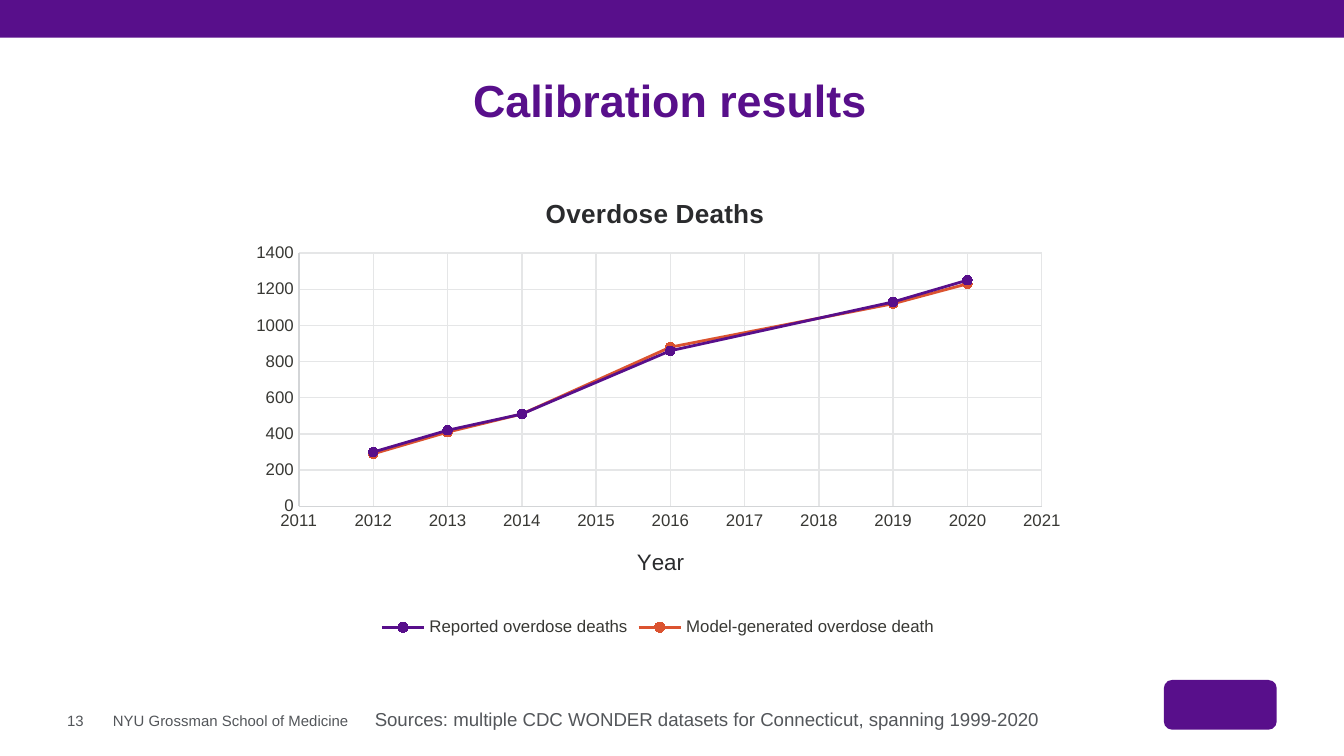
from lxml.etree import SubElement
from pptx import Presentation
from pptx.chart.data import XyChartData
from pptx.dml.color import RGBColor
from pptx.enum.chart import XL_CHART_TYPE, XL_LEGEND_POSITION, XL_MARKER_STYLE, XL_TICK_MARK
from pptx.enum.shapes import MSO_SHAPE
from pptx.enum.text import MSO_ANCHOR
from pptx.oxml.ns import qn
from pptx.util import Inches, Pt

COLORS = {
    "purple": "580F8B", "orange": "DB5330", "gray": "53565A", "dark": "2A2B2D",
    "label": "383834", "axis": "D3D5D7", "grid": "E5E6E7",
}
FONT = "Arial"
WIDTH = 10
HEIGHT = WIDTH * 9 / 16
YEARS = [2012, 2013, 2014, 2016, 2019, 2020]
SERIES = [
    ("Reported overdose deaths", "purple", [300, 420, 510, 860, 1130, 1250]),
    ("Model-generated overdose death", "orange", [290, 410, 510, 880, 1120, 1230]),
]
BLOCKS = [
    (0, 0, WIDTH, 0.28, MSO_SHAPE.RECTANGLE),
    (8.66, 5.06, 0.84, 0.37, MSO_SHAPE.ROUNDED_RECTANGLE),
]
TEXTS = [
    ("Calibration results", dict(box=(3.52, 0.6, 2.96, 0.34), size=24, color="purple",
                                 bold=True, anchor=MSO_ANCHOR.BOTTOM, spacing=0.85)),
    ("NYU Grossman School of Medicine", dict(box=(0.84, 5.3, 3.7, 0.13), size=8)),
    ("13", dict(box=(0.5, 5.3, 0.28, 0.13), size=8)),
    ("Sources: multiple CDC WONDER datasets for Connecticut, spanning 1999-2020",
     dict(box=(2.69, 5.22, 5.18, 0.27), size=10, anchor=MSO_ANCHOR.TOP,
          inset=(0.1, 0.05), wrap=False)),
]


def rgb(name):
    return RGBColor.from_string(COLORS[name])


def style(font, size, color, bold=False):
    font.name, font.size, font.bold = FONT, Pt(size), bold
    font.color.rgb = rgb(color)


def add_text(slide, text, box, size, color="gray", bold=False,
             anchor=MSO_ANCHOR.MIDDLE, inset=(0, 0), wrap=True, spacing=None):
    frame = slide.shapes.add_textbox(*map(Inches, box)).text_frame
    frame.word_wrap, frame.vertical_anchor = wrap, anchor
    frame.margin_left = frame.margin_right = Inches(inset[0])
    frame.margin_top = frame.margin_bottom = Inches(inset[1])
    para = frame.paragraphs[0]
    para.line_spacing = spacing
    run = para.add_run()
    run.text = text
    style(run.font, size, color, bold)


def place(part, index, **sides):
    old = part.find(qn("c:layout"))
    if old is not None:
        part.remove(old)
    layout = SubElement(part, qn("c:layout"))
    part.insert(index, layout)
    manual = SubElement(layout, qn("c:manualLayout"))
    if "w" in sides:
        SubElement(manual, qn("c:layoutTarget")).set("val", "inner")
    for side in "xy":
        SubElement(manual, qn(f"c:{side}Mode")).set("val", "edge")
    for side, value in sides.items():
        SubElement(manual, qn(f"c:{side}")).set("val", str(value))


def set_title(owner, text, size, bold, x, y):
    owner.has_title = True
    title = owner.chart_title if hasattr(owner, "chart_title") else owner.axis_title
    run = title.text_frame.paragraphs[0].add_run()
    run.text = text
    style(run.font, size, "dark", bold)
    place(title._element, 1, x=x, y=y)


def set_line(line, color, width):
    line.color.rgb = rgb(color)
    line.width = Pt(width)


def set_axis(axis, low, high, step):
    axis.minimum_scale, axis.maximum_scale, axis.major_unit = low, high, step
    axis.major_tick_mark = axis.minor_tick_mark = XL_TICK_MARK.NONE
    axis.has_major_gridlines = True
    set_line(axis.major_gridlines.format.line, "grid", 0.75)
    set_line(axis.format.line, "axis", 0.75)
    style(axis.tick_labels.font, 9, "label")


def add_deaths(slide):
    data = XyChartData()
    for name, _, deaths in SERIES:
        line = data.add_series(name)
        for year, count in zip(YEARS, deaths):
            line.add_data_point(year, count)
    box = map(Inches, (1.79, 1.29, 6.21, 3.49))
    chart = slide.shapes.add_chart(XL_CHART_TYPE.XY_SCATTER_LINES, *box, data).chart
    style(chart.font, 10, "gray")
    set_title(chart, "Overdose Deaths", 14, True, x=0.36, y=0.04)
    set_axis(chart.category_axis, 2011, 2021, 1)
    set_title(chart.category_axis, "Year", 12, False, x=0.47, y=0.79)
    set_axis(chart.value_axis, 0, 1400, 200)
    chart.has_legend = True
    chart.legend.position = XL_LEGEND_POSITION.BOTTOM
    chart.legend.include_in_layout = False
    style(chart.legend.font, 9, "label")
    plot = chart.plots[0]
    plot.vary_by_categories = False
    for series, (_, color, _) in zip(plot.series, SERIES):
        set_line(series.format.line, color, 1.5)
        marker = series.marker
        marker.style, marker.size = XL_MARKER_STYLE.CIRCLE, 5
        marker.format.fill.solid()
        marker.format.fill.fore_color.rgb = rgb(color)
        set_line(marker.format.line, color, 0.75)
    area = chart._chartSpace.find(".//" + qn("c:plotArea"))
    place(area, 0, x=0.07, y=0.17, w=0.89, h=0.54)


def main():
    deck = Presentation()
    deck.slide_width, deck.slide_height = Inches(WIDTH), Inches(HEIGHT)
    slide = deck.slides.add_slide(deck.slide_layouts[6])
    for *box, kind in BLOCKS:
        block = slide.shapes.add_shape(kind, *map(Inches, box))
        block.shadow.inherit = False
        block.fill.solid()
        block.fill.fore_color.rgb = rgb("purple")
        block.line.fill.background()
    add_deaths(slide)
    for text, form in TEXTS:
        add_text(slide, text, **form)
    deck.save("out.pptx")


if __name__ == "__main__":
    main()
